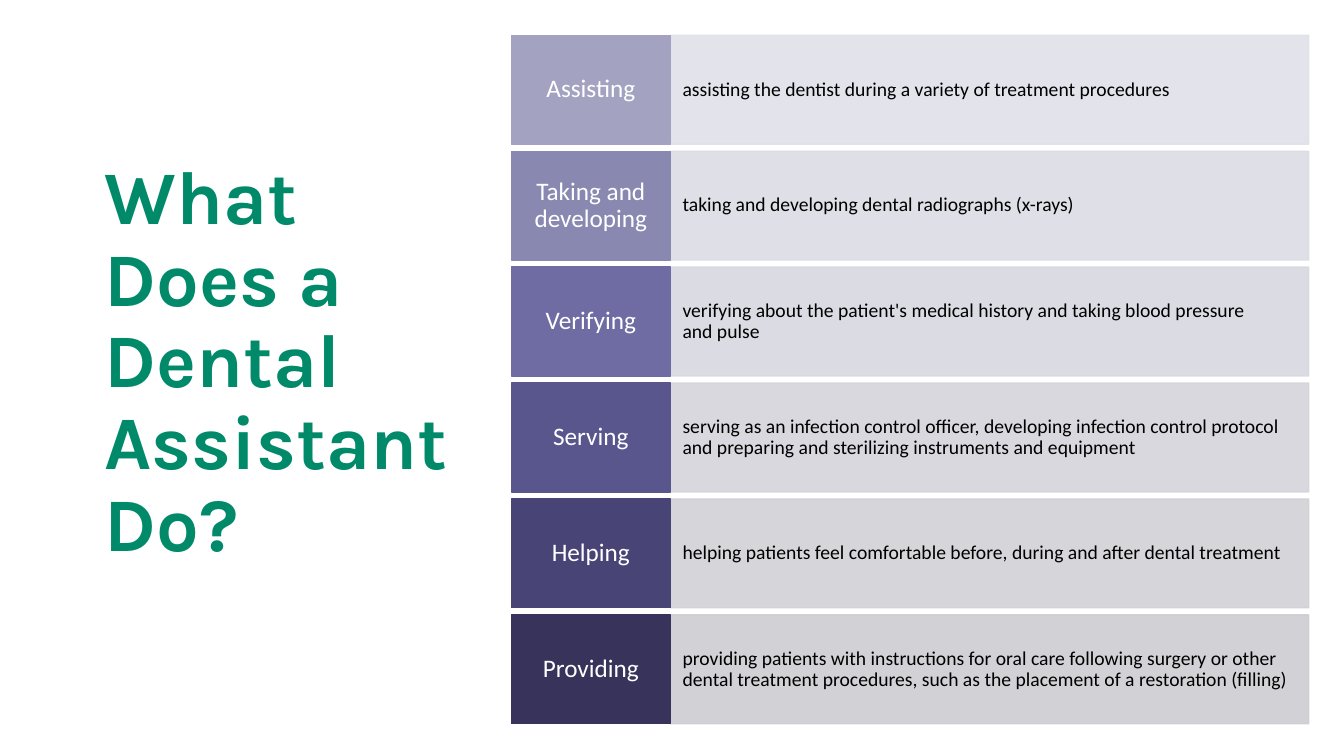
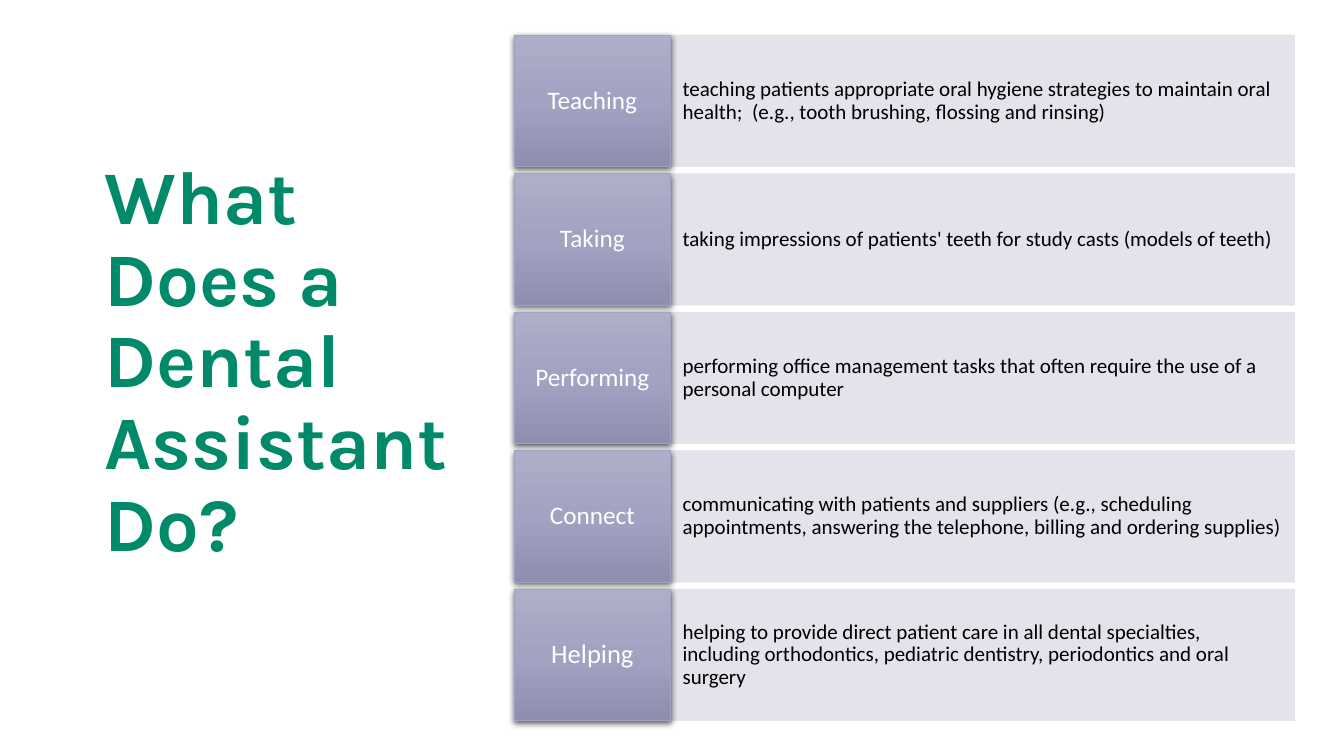
from copy import deepcopy
from dataclasses import dataclass

from lxml.etree import SubElement
from pptx import Presentation
from pptx.dml.color import RGBColor as RGB
from pptx.enum.shapes import MSO_SHAPE as SHAPE
from pptx.enum.text import MSO_ANCHOR as ANCHOR, PP_ALIGN as ALIGN
from pptx.oxml.ns import qn
from pptx.util import Inches, Pt


@dataclass(frozen=True)
class Theme:
    """Colours, fonts and type sizes shared by the slides."""
    title_color: str = "008A69"
    label_color: str = "FFFFFF"
    detail_color: str = "000000"
    shadow_color: str = "000000"
    title_font: str = "Karla"
    body_font: str = "Calibri"
    title_size: int = 54
    label_size: int = 18
    label_large: int = 19
    flat_detail_size: int = 14
    raised_detail_size: int = 15
    detail_opacity: int = 90
    shadow_opacity: int = 63
    label_fills: tuple = ("A3A3C1", "8988B1", "6E6CA3", "59568E", "484475", "37335B")
    detail_fills: tuple = ("E0E0E9", "DCDCE5", "D8D8E0", "D5D4DB", "D1D1D7", "CECDD2")
    raised_stops: tuple = ("AEAEC8", "A2A2C2", "8E8EAF")


THEME = Theme()
TITLE = "What Does a Dental Assistant Do?"
TITLE_BOX = (0.94, 1.71, 3.85, 3.79)
ROW_GAP = 0.07

FLAT_ROWS = [
    ("Assisting", "assisting the dentist during a variety of treatment procedures"),
    ("Taking and developing", "taking and developing dental radiographs (x-rays)"),
    ("Verifying", "verifying about the patient's medical history and taking blood pressure \nand pulse"),
    ("Serving", "serving as an infection control officer, developing infection control protocol "
                "and preparing and sterilizing instruments and equipment"),
    ("Helping", "helping patients feel comfortable before, during and after dental treatment"),
    ("Providing", "providing patients with instructions for oral care following surgery or other "
                  "dental treatment procedures, such as the placement of a restoration (filling)"),
]
RAISED_ROWS = [
    ("Teaching", "teaching patients appropriate oral hygiene strategies to maintain oral health;  "
                 "(e.g., tooth brushing, flossing and rinsing)"),
    ("Taking", "taking impressions of patients' teeth for study casts (models of teeth)"),
    ("Performing", "performing office management tasks that often require the use of a personal computer"),
    ("Connect", "communicating with patients and suppliers (e.g., scheduling appointments, "
                "answering the telephone, billing and ordering supplies)"),
    ("Helping", "helping to provide direct patient care in all dental specialties, including "
                "orthodontics, pediatric dentistry, periodontics and oral surgery"),
]


def write(sp, text, font, size, color, align=ALIGN.LEFT, bold=False, inset=0.1):
    """Fill a shape with one vertically centred paragraph."""
    tf = sp.text_frame
    tf.word_wrap = True
    tf.vertical_anchor = ANCHOR.MIDDLE
    tf.margin_left = tf.margin_right = Inches(inset)
    tf.margin_top = tf.margin_bottom = Inches(0.05)
    p = tf.paragraphs[0]
    p.text = text
    p.alignment = align
    p.line_spacing = 0.9
    for r in p.runs:
        r.font.name, r.font.size, r.font.bold = font, Pt(size), bold
        r.font.color.rgb = RGB.from_string(color)


def add_cell(slide, box, color, line_width):
    """Add a plain rectangle with matching fill and line."""
    sp = slide.shapes.add_shape(SHAPE.RECTANGLE, *map(Inches, box))
    sp.shadow.inherit = False
    sp.fill.solid()
    sp.fill.fore_color.rgb = sp.line.color.rgb = RGB.from_string(color)
    sp.line.width = Pt(line_width)
    return sp


def set_opacity(sp, percent):
    """Make the fill and line of a rectangle partly transparent."""
    for clr in sp._element.spPr.iter(qn("a:srgbClr")):
        SubElement(clr, qn("a:alpha"), val=str(percent * 1000))


def raise_cell(sp):
    """Give a rectangle a vertical gradient and a soft shadow below."""
    sp.fill.gradient()
    sp.fill.gradient_angle = 270
    spPr = sp._element.spPr
    stops = spPr.find(".//" + qn("a:gsLst"))
    stops.insert(1, deepcopy(stops[0]))
    for i, (stop, color) in enumerate(zip(sp.fill.gradient_stops, THEME.raised_stops)):
        stop.position = i / 2
        stop.color.rgb = RGB.from_string(color)
    shadow = SubElement(spPr.find(qn("a:effectLst")), qn("a:outerShdw"), blurRad=str(Pt(4.5)),
                        dist=str(Pt(1.5)), dir="5400000", algn="ctr", rotWithShape="0")
    clr = SubElement(shadow, qn("a:srgbClr"), val=THEME.shadow_color)
    SubElement(clr, qn("a:alpha"), val=str(THEME.shadow_opacity * 1000))


def add_title(slide, box):
    """Add the large title on the left."""
    sp = slide.shapes.add_textbox(*map(Inches, box))
    write(sp, TITLE, THEME.title_font, THEME.title_size, THEME.title_color, bold=True)


def add_row(slide, box, label_width, label, detail, colors, sizes, raised):
    """Add one row: a label cell and the detail cell beside it."""
    x, y, w, h = box
    label_fill, detail_fill = colors
    label_size, detail_size = sizes
    line_width = 0.5 if raised else 1
    sp = add_cell(slide, (x + label_width, y, w - label_width, h), detail_fill, line_width)
    set_opacity(sp, THEME.detail_opacity)
    write(sp, detail, THEME.body_font, detail_size, THEME.detail_color, inset=0.12)
    sp = add_cell(slide, (x, y, label_width, h), label_fill, line_width)
    if raised:
        raise_cell(sp)
    write(sp, label, THEME.body_font, label_size, THEME.label_color, ALIGN.CENTER, inset=0.08)


def add_rows(slide, box, label_width, rows, raised=False):
    """Stack the rows with equal gaps inside the box."""
    x, y, w, h = box
    row_h = (h - ROW_GAP * (len(rows) - 1)) / len(rows)
    detail_size = THEME.raised_detail_size if raised else THEME.flat_detail_size
    for i, (label, detail) in enumerate(rows):
        shade = 0 if raised else i
        last_raised = raised and i == len(rows) - 1
        label_size = THEME.label_large if last_raised else THEME.label_size
        add_row(slide, (x, y + i * (row_h + ROW_GAP), w, row_h), label_width, label, detail,
                (THEME.label_fills[shade], THEME.detail_fills[shade]),
                (label_size, detail_size), raised)


def add_duties_slide(prs, box, label_width, rows, raised=False):
    """Add a slide with the title and a list of duties."""
    slide = prs.slides.add_slide(prs.slide_layouts[6])
    add_title(slide, TITLE_BOX)
    add_rows(slide, box, label_width, rows, raised)


def main():
    """Build and save the presentation."""
    prs = Presentation()
    prs.slide_width, prs.slide_height = Inches(13.33), Inches(7.5)
    add_duties_slide(prs, (5.07, 0.35, 7.91, 6.83), 1.58, FLAT_ROWS)
    add_duties_slide(prs, (5.1, 0.35, 7.74, 6.8), 1.55, RAISED_ROWS, raised=True)
    prs.save("out.pptx")


if __name__ == "__main__":
    main()
